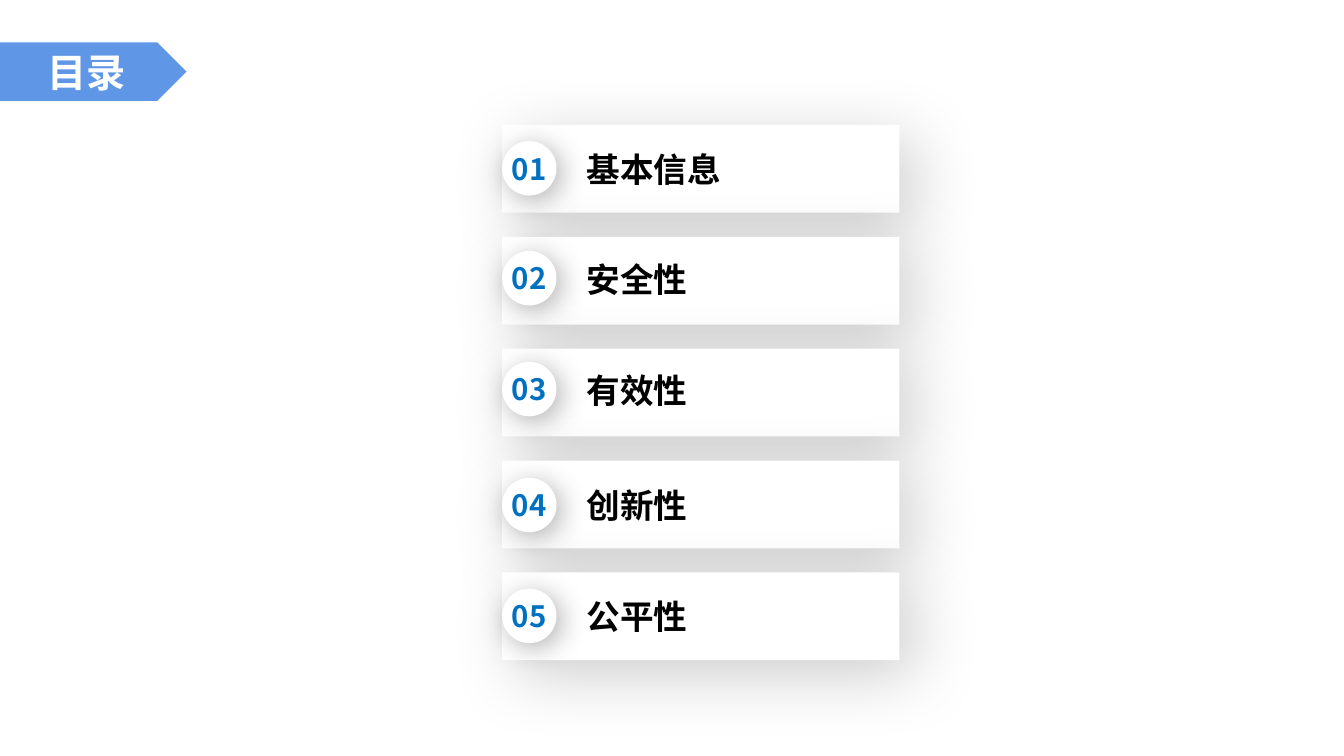
from dataclasses import dataclass

from lxml.etree import SubElement
from pptx import Presentation
from pptx.dml.color import RGBColor
from pptx.enum.shapes import MSO_SHAPE
from pptx.enum.text import MSO_ANCHOR, MSO_AUTO_SIZE, PP_ALIGN
from pptx.oxml.ns import qn
from pptx.shapes.autoshape import Shape
from pptx.shapes.group import GroupShape
from pptx.slide import Slide
from pptx.text.text import TextFrame
from pptx.util import Inches, Pt

COLORS = {
    "banner": "6096E6",
    "white": "FFFFFF",
    "heading": "000000",
    "number": "0070C0",
    "shadow": "000000",
}
FONT = "Noto Sans CJK SC"
CARD_LEFT, CARD_TOP, CARD_PITCH = 4.98, 1.24, 1.11
CARD_WIDTH, CARD_HEIGHT = 3.94, 0.87
BADGE_SIZE = 0.54
HEADING_LEFT, HEADING_HEIGHT = 5.72, 0.5


@dataclass(frozen=True)
class Shadow:
    opacity: int
    blur: int
    distance: int


@dataclass(frozen=True)
class Chapter:
    heading: str
    heading_top: float
    heading_width: float
    badge_top: float


CARD_SHADOW = Shadow(opacity=20, blur=50, distance=15)
BADGE_SHADOW = Shadow(opacity=30, blur=20, distance=5)

CHAPTERS = [
    Chapter("基本信息", 1.43, 1.55, 1.4),
    Chapter("安全性", 2.52, 1.21, 2.49),
    Chapter("有效性", 3.62, 1.21, 3.59),
    Chapter("创新性", 4.76, 1.21, 4.74),
    Chapter("公平性", 5.86, 1.21, 5.84),
]


def write_text(frame: TextFrame, text: str, size: int, color: str, align: PP_ALIGN) -> None:
    frame.text = text
    paragraph = frame.paragraphs[0]
    paragraph.alignment = align
    font = paragraph.font
    font.size = Pt(size)
    font.bold = True
    font.name = FONT
    font.color.rgb = RGBColor.from_string(COLORS[color])
    defaults = paragraph._p.get_or_add_pPr().find(qn("a:defRPr"))
    SubElement(defaults, qn("a:ea"), typeface=FONT)


def paint(shape: Shape, color: str) -> None:
    shape.shadow.inherit = False
    shape.fill.solid()
    shape.fill.fore_color.rgb = RGBColor.from_string(COLORS[color])
    shape.line.fill.background()


def cast_shadow(shape: Shape, shadow: Shadow) -> None:
    effects = shape._element.spPr.find(qn("a:effectLst"))
    outer = SubElement(
        effects,
        qn("a:outerShdw"),
        blurRad=str(Pt(shadow.blur)),
        dist=str(Pt(shadow.distance)),
        dir=str(45 * 60000),
        algn="tl",
        rotWithShape="0",
    )
    tint = SubElement(outer, qn("a:srgbClr"), val=COLORS["shadow"])
    SubElement(tint, qn("a:alpha"), val=str(shadow.opacity * 1000))


def draw_title(slide: Slide, text: str) -> None:
    top, height = Inches(0.42), Inches(0.58)
    banner = slide.shapes.add_shape(MSO_SHAPE.PENTAGON, 0, top, Inches(1.85), height)
    paint(banner, "banner")
    title = slide.shapes.title
    title._element.addprevious(banner._element)
    title.left, title.top, title.width, title.height = 0, top, Inches(1.71), height
    frame = title.text_frame
    frame.auto_size = MSO_AUTO_SIZE.NONE
    frame.vertical_anchor = MSO_ANCHOR.MIDDLE
    write_text(frame, text, 28, "white", PP_ALIGN.CENTER)


def draw_card(group: GroupShape, top: float) -> None:
    card = group.shapes.add_shape(
        MSO_SHAPE.RECTANGLE,
        Inches(CARD_LEFT), Inches(top), Inches(CARD_WIDTH), Inches(CARD_HEIGHT),
    )
    paint(card, "white")
    cast_shadow(card, CARD_SHADOW)


def draw_heading(group: GroupShape, chapter: Chapter) -> None:
    heading = group.shapes.add_textbox(
        Inches(HEADING_LEFT), Inches(chapter.heading_top),
        Inches(chapter.heading_width), Inches(HEADING_HEIGHT),
    )
    frame = heading.text_frame
    frame.word_wrap = False
    frame.auto_size = MSO_AUTO_SIZE.SHAPE_TO_FIT_TEXT
    write_text(frame, chapter.heading, 24, "heading", PP_ALIGN.LEFT)


def draw_badge(group: GroupShape, number: int, top: float) -> None:
    badge = group.shapes.add_shape(
        MSO_SHAPE.OVAL,
        Inches(CARD_LEFT), Inches(top), Inches(BADGE_SIZE), Inches(BADGE_SIZE),
    )
    paint(badge, "white")
    cast_shadow(badge, BADGE_SHADOW)
    frame = badge.text_frame
    frame.word_wrap = False
    frame.vertical_anchor = MSO_ANCHOR.MIDDLE
    write_text(frame, f"{number:02d}", 21, "number", PP_ALIGN.CENTER)


def main() -> None:
    deck = Presentation()
    deck.slide_width, deck.slide_height = Inches(13.33), Inches(7.5)
    slide = deck.slides.add_slide(deck.slide_layouts[5])
    draw_title(slide, "目录")
    for index, chapter in enumerate(CHAPTERS):
        group = slide.shapes.add_group_shape()
        draw_card(group, CARD_TOP + index * CARD_PITCH)
        draw_heading(group, chapter)
        draw_badge(group, index + 1, chapter.badge_top)
    deck.save("out.pptx")


if __name__ == "__main__":
    main()
